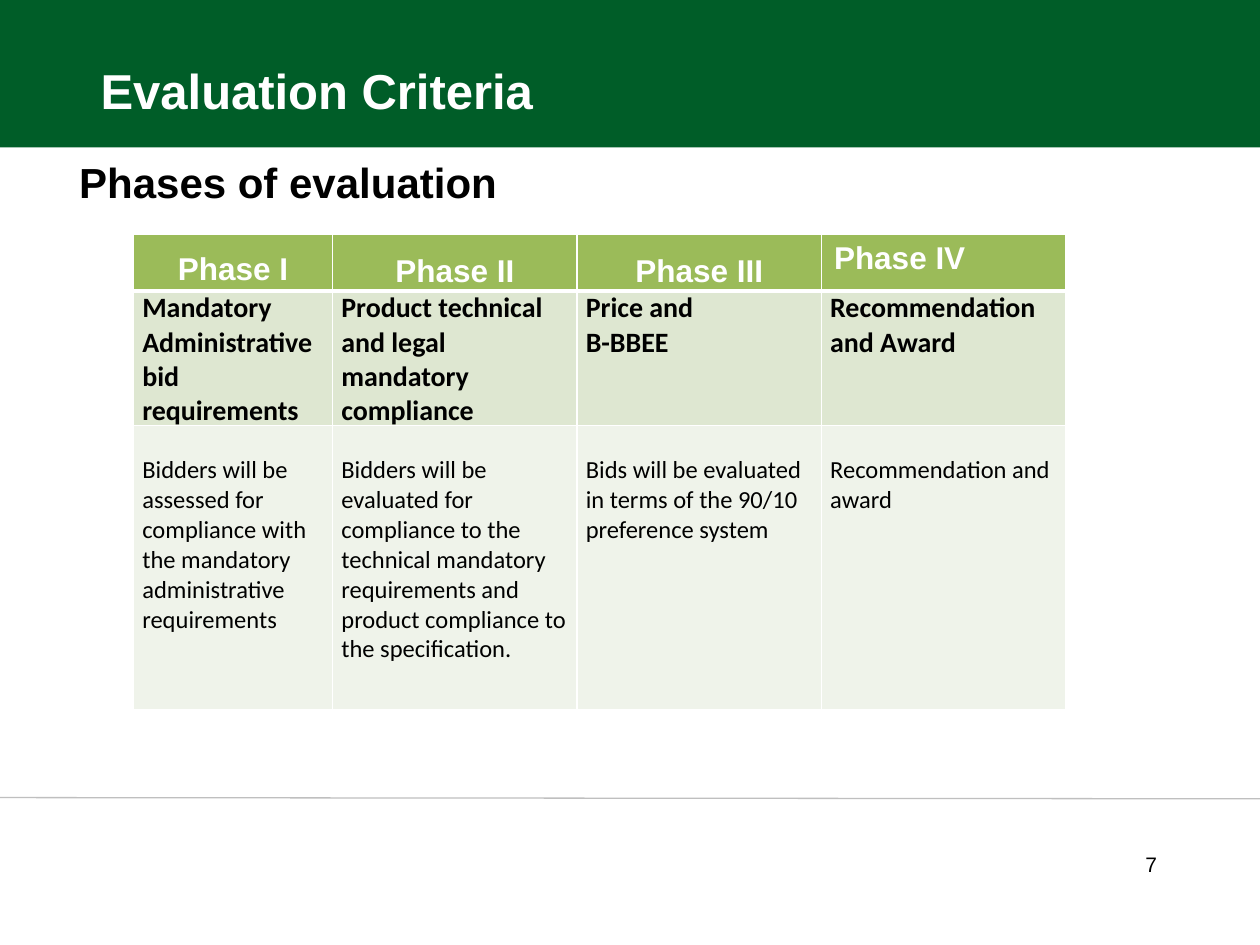
from lxml import etree
from pptx import Presentation
from pptx.dml.color import RGBColor
from pptx.enum.shapes import MSO_CONNECTOR, MSO_SHAPE
from pptx.enum.text import MSO_ANCHOR, PP_ALIGN
from pptx.oxml.ns import qn
from pptx.util import Inches, Pt

GREEN, WHITE, BLACK, GREY = "005D28", "FFFFFF", "000000", "BFBFBF"
COLUMN_WIDTHS = [1.58, 1.94, 1.94, 1.94]
ROW_HEIGHTS = [0.45, 1.06, 2.26]
PHASES = ["Phase I", "Phase II", "Phase III", "Phase IV"]
TOPICS = [
    "Mandatory  Administrative bid requirements",
    "Product technical and legal mandatory compliance",
    "Price and\nB-BBEE",
    "Recommendation and Award",
]
DETAILS = [
    "Bidders will be assessed for compliance with the mandatory administrative requirements",
    "Bidders will be evaluated for compliance to the technical mandatory requirements "
    "and product compliance to the specification.",
    "Bids will be evaluated in terms of the 90/10 preference system",
    "Recommendation and award",
]
# Text, fill, font name, size, bold, font colour, top margin
TABLE_ROWS = [
    (PHASES, "9BBB59", "Arial", 18, True, WHITE, 0),
    (TOPICS, "DEE7D1", "Calibri", 16, True, BLACK, 0),
    (DETAILS, "EFF3EA", "Calibri", 14, False, BLACK, 0.24),
]


def color(value):
    return RGBColor.from_string(value)


def format_text(frame, text, font_name, size, bold, font_color, align=PP_ALIGN.LEFT):
    frame.text = text
    frame.word_wrap = True
    for para in frame.paragraphs:
        para.alignment = align
        for span in para.runs:
            span.font.name = font_name
            span.font.size = Pt(size)
            span.font.bold = bold
            span.font.color.rgb = color(font_color)


def add_text(page, box, text, size, bold, font_color,
             align=PP_ALIGN.LEFT, anchor=MSO_ANCHOR.TOP):
    frame = page.shapes.add_textbox(*map(Inches, box)).text_frame
    format_text(frame, text, "Arial", size, bold, font_color, align)
    frame.vertical_anchor = anchor


def add_header(page, box):
    band = page.shapes.add_shape(MSO_SHAPE.RECTANGLE, *map(Inches, box))
    band.shadow.inherit = False
    band.fill.solid()
    band.fill.fore_color.rgb = color(GREEN)
    band.line.fill.background()
    add_text(page, (0.7, 0, 6.08, 1), "Evaluation Criteria", 28, True, WHITE,
             anchor=MSO_ANCHOR.BOTTOM)


def add_footer(page, box):
    left, top, width, height = box
    rule = page.shapes.add_connector(
        MSO_CONNECTOR.STRAIGHT, Inches(left), Inches(top),
        Inches(left + width), Inches(top + 0.01))
    rule.line.color.rgb = color(GREY)
    rule.line.width = Pt(0.75)
    etree.SubElement(rule._element.spPr, qn("a:effectLst"))
    add_text(page, (4.13, top + 0.38, 5.15, height - 0.38), "7", 12, False, BLACK,
             PP_ALIGN.RIGHT)


def set_borders(cell, top_width, bottom_width):
    properties = cell._tc.get_or_add_tcPr()
    widths = {"lnL": 1, "lnR": 1, "lnT": top_width, "lnB": bottom_width}
    for side, width in widths.items():
        line = etree.SubElement(properties, qn(f"a:{side}"), w=str(Pt(width)))
        fill = etree.SubElement(line, qn("a:solidFill"))
        etree.SubElement(fill, qn("a:srgbClr"), val=WHITE)


def style_phase_cell(cell, column):
    if column == len(PHASES) - 1:
        cell.margin_left = cell.margin_right = Inches(0.1)
        cell.margin_top = cell.margin_bottom = Inches(0.05)
        return
    para = cell.text_frame.paragraphs[0]
    para.alignment = PP_ALIGN.CENTER
    para.line_spacing = 1.5
    if column > 0:
        cell.vertical_anchor = MSO_ANCHOR.MIDDLE


def add_phase_table(page, box):
    table = page.shapes.add_table(
        len(TABLE_ROWS), len(PHASES), *map(Inches, box)).table
    table.first_row = table.horz_banding = False
    for column, width in zip(table.columns, COLUMN_WIDTHS):
        column.width = Inches(width)
    for row, height in zip(table.rows, ROW_HEIGHTS):
        row.height = Inches(height)
    for r, (texts, fill, font_name, size, bold, font_color, top) in enumerate(TABLE_ROWS):
        for c, text in enumerate(texts):
            cell = table.cell(r, c)
            set_borders(cell, 3 if r == 1 else 1, 3 if r == 0 else 1)
            cell.fill.solid()
            cell.fill.fore_color.rgb = color(fill)
            cell.margin_left = cell.margin_right = Inches(0.07)
            cell.margin_top, cell.margin_bottom = Inches(top), Inches(0)
            format_text(cell.text_frame, text, font_name, size, bold, font_color)
            if r == 0:
                style_phase_cell(cell, c)


def main():
    deck = Presentation()
    deck.slide_width, deck.slide_height = Inches(10), Inches(7.5)
    page = deck.slides.add_slide(deck.slide_layouts[6])
    # Title band
    add_header(page, (0, 0, 10, 1.17))
    # Rule and page number
    add_footer(page, (0, 6.33, 10, 1.17))
    # Subtitle and phases
    add_text(page, (0.53, 1.19, 8.99, 0.91), "Phases of evaluation", 24, True, BLACK)
    add_phase_table(page, (1.06, 1.86, sum(COLUMN_WIDTHS), sum(ROW_HEIGHTS)))
    deck.save("out.pptx")


if __name__ == "__main__":
    main()
